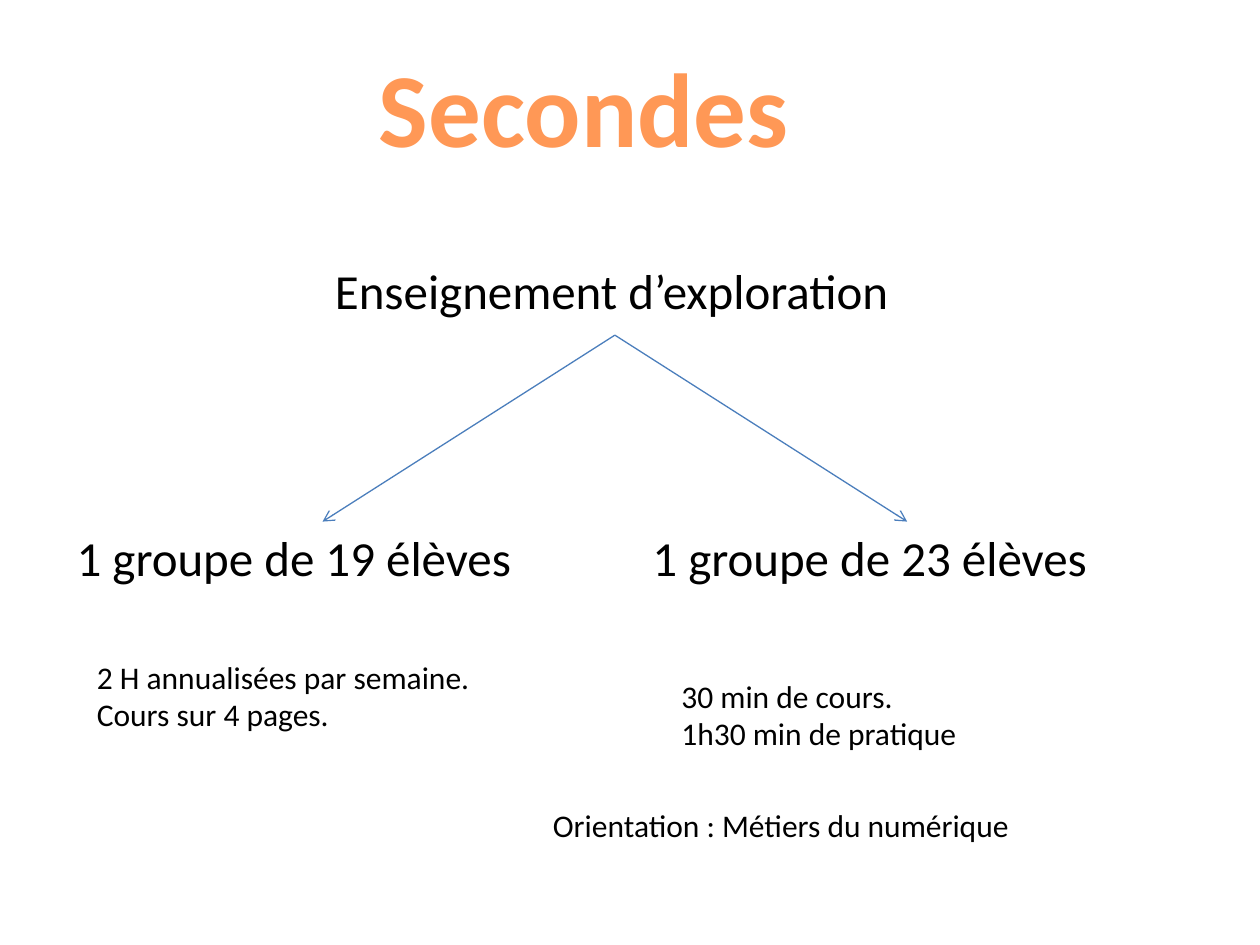
from lxml.etree import SubElement
from pptx import Presentation
from pptx.dml.color import RGBColor
from pptx.enum.shapes import MSO_CONNECTOR
from pptx.enum.text import MSO_AUTO_SIZE
from pptx.oxml.ns import qn
from pptx.util import Inches, Pt

THEME = {
    "line": {"color": "4B7EBC", "width": 0.75},
    "title": {"name": "Calibri", "size": Pt(60), "bold": True, "color": "FF9856"},
    "heading": {"name": "Calibri", "size": Pt(28), "bold": False, "color": "000000"},
    "body": {"name": "Calibri", "size": Pt(18), "bold": False, "color": "000000"},
}

# style, (left, top, width, height), paragraphs
TEXTS = [
    ("title", (2.91, 0.29, 4.17, 1.11), ["Secondes"]),
    ("heading", (2.56, 2.02, 4.65, 0.57), ["Enseignement d’exploration"]),
    ("heading", (0.51, 4.14, 4.09, 0.57), ["1 groupe de 19 élèves"]),
    ("heading", (5.08, 4.14, 4.25, 0.57), ["1 groupe de 23 élèves"]),
    ("body", (0.67, 5.17, 6.38, 0.71),
     ["2 H annualisées par semaine.", "Cours sur 4 pages."]),
    ("body", (5.31, 5.32, 3.23, 0.71),
     ["30 min de cours.", "1h30 min de pratique"]),
    ("body", (4.29, 6.35, 3.86, 0.4), ["Orientation : Métiers du numérique"]),
]

BRANCH_START = (4.88, 2.66)
BRANCH_SPREAD, BRANCH_DROP = 2.32, 1.48


def add_text(s, style, box, lines):
    tf = s.shapes.add_textbox(*map(Inches, box)).text_frame
    tf.word_wrap = True
    tf.auto_size = MSO_AUTO_SIZE.SHAPE_TO_FIT_TEXT
    for i, line in enumerate(lines):
        p = tf.paragraphs[0] if i == 0 else tf.add_paragraph()
        r = p.add_run()
        r.text = line
        for key, value in THEME[style].items():
            if key == "color":
                r.font.color.rgb = RGBColor.from_string(value)
            else:
                setattr(r.font, key, value)


def add_arrow(s, start, end):
    cx = s.shapes.add_connector(MSO_CONNECTOR.STRAIGHT, *map(Inches, start + end))
    cx.line.color.rgb = RGBColor.from_string(THEME["line"]["color"])
    cx.line.width = Pt(THEME["line"]["width"])
    SubElement(cx.line._get_or_add_ln(), qn("a:tailEnd"), type="arrow")
    SubElement(cx._element.spPr, qn("a:effectLst"))


def main():
    prs = Presentation()
    prs.slide_width, prs.slide_height = Inches(10), Inches(7.5)
    s = prs.slides.add_slide(prs.slide_layouts[6])
    for style, box, lines in TEXTS:
        add_text(s, style, box, lines)
    x, y = BRANCH_START
    for side in (-1, 1):
        add_arrow(s, BRANCH_START, (x + side * BRANCH_SPREAD, y + BRANCH_DROP))
    prs.save("out.pptx")


if __name__ == "__main__":
    main()
